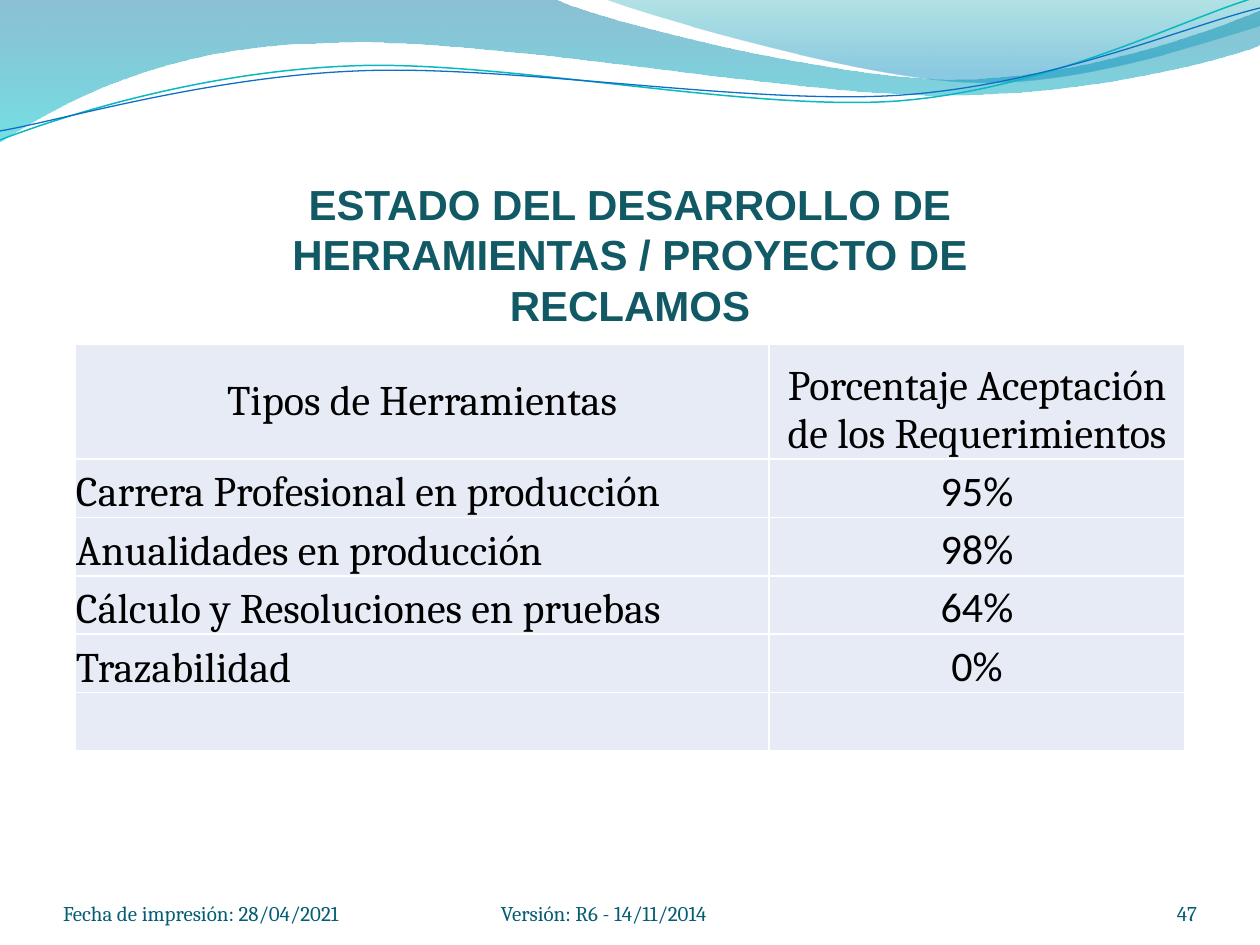
from math import cos, radians, sin

from lxml import etree
from pptx import Presentation
from pptx.dml.color import RGBColor
from pptx.enum.text import MSO_ANCHOR, MSO_AUTO_SIZE, PP_ALIGN
from pptx.oxml.ns import qn
from pptx.util import Pt

LEFT, CENTER, RIGHT = PP_ALIGN.LEFT, PP_ALIGN.CENTER, PP_ALIGN.RIGHT
TOP, MIDDLE, BOTTOM = MSO_ANCHOR.TOP, MSO_ANCHOR.MIDDLE, MSO_ANCHOR.BOTTOM
PX = 914400 / 126
rgb = RGBColor.from_string


def write(frame, text, font="Cambria", size=24, color="000000", bold=False, align=LEFT):
    para = frame.paragraphs[0]
    para.text = text
    para.alignment = align
    for run in para.runs:
        run.font.name = font
        run.font.size = Pt(size)
        run.font.bold = bold
        run.font.color.rgb = rgb(color)


def trace(shapes, box, parts, turn=0, close=False):
    """Draw a freeform in box: the first part is the start, then 2 numbers
    make a line and 6 a Bezier curve. Points are given as seen after the turn."""
    x, y, w, h = box
    pen = shapes.build_freeform(round(x * PX), round(y * PX), scale=1.0)
    corners = [(x + w, y), (x + w, y + h), (x, y + h)]
    pen.add_line_segments([(a * PX, b * PX) for a, b in corners])
    shape = pen.convert_to_shape()
    shape.shadow.inherit = False
    shape.rotation = turn
    path = next(shape.element.iter(qn("a:path")))
    for old in list(path):
        path.remove(old)
    co, si = cos(radians(turn)), sin(radians(turn))
    for i, part in enumerate(parts):
        kind = "moveTo" if i == 0 else "lnTo" if len(part) == 2 else "cubicBezTo"
        move = etree.SubElement(path, qn("a:" + kind))
        for a, b in zip(part[::2], part[1::2]):
            dx, dy = a - x - w / 2, b - y - h / 2
            etree.SubElement(move, qn("a:pt"),
                             x=str(round((w / 2 + dx * co + dy * si) * PX)),
                             y=str(round((h / 2 - dx * si + dy * co) * PX)))
    if close:
        etree.SubElement(path, qn("a:close"))
    return shape


deck = Presentation()
deck.slide_width, deck.slide_height = round(1260 * PX), round(945 * PX)
slide = deck.slides.add_slide(deck.slide_layouts[5])
shapes = slide.shapes

# Filled bands: box, parts, gradient stops (position, colour, opacity %)
bands = [
    ((-1, -1, 1262, 143),
     [(0, 0), (554, -1), (600, 21, 837, 79, 955, 79), (1075, 79, 1207, 33, 1260, 11),
      (1261, 45), (1239, 55, 1096, 96, 940, 95), (784, 95, 481, 35, 324, 43),
      (163, 45, 58, 105, -1, 142), (0, 0)],
     [(0, "0074A1", 45), (1, "00C6CF", 55)]),
    ((604, -1, 656, 88),
     [(604, -1), (641, 14, 859, 78, 969, 82), (1079, 87, 1211, 40, 1260, 26),
      (1260, 0), (604, -1)],
     [(0, "00A1A9", 30), (0.8, "008BBF", 45)]),
]
for box, parts, stops in bands:
    band = trace(shapes, box, parts, close=True)
    band.line.fill.background()
    band.fill.gradient()
    band.fill.gradient_angle = 270
    for stop, (place, color, alpha) in zip(band.fill.gradient_stops, stops):
        stop.position = place
        stop.color.rgb = rgb(color)
    tags = band.element.spPr.iter(qn("a:srgbClr"))
    for tag, (place, color, alpha) in zip(tags, stops):
        etree.SubElement(tag, qn("a:alpha"), val=str(alpha * 1000))

waves = [
    ((-2, 28, 1262, 89),
     [(0, 140), (60, 117, 199, 72, 349, 66), (498, 59, 747, 112, 898, 101),
      (1050, 89, 1182, 19, 1257, -3)], "0AB8BF", 0.85),
    ((-2, 38, 1264, 73),
     [(0, 131), (59, 121, 207, 77, 357, 71), (508, 64, 752, 106, 903, 95),
      (1053, 84, 1186, 26, 1260, 8)], "0F6FC6", 0.75),
]
for box, parts, color, width in waves:
    wave = trace(shapes, box, parts, turn=357.3)
    wave.fill.background()
    wave.line.color.rgb = rgb(color)
    wave.line.width = Pt(width)

# Footer
for x, width, text, align in [
    (63, 294, "Fecha de impresión: 28/04/2021", LEFT),
    (501, 329, "Versión: R6 - 14/11/2014", LEFT),
    (1092, 105, "47", RIGHT),
]:
    note = shapes.add_textbox(*(round(v * PX) for v in (x, 876, width, 50)))
    frame = note.text_frame
    frame.word_wrap = True
    frame.vertical_anchor = BOTTOM
    frame.margin_left = frame.margin_right = frame.margin_top = frame.margin_bottom = 0
    write(frame, text, size=12, color="045D75", align=align)

# Title, in front of the waves
title = shapes.title
title.element.getparent().append(title.element)
title.left, title.top, title.width, title.height = (
    round(v * PX) for v in (154, 172, 952, 420))
title.text_frame.auto_size = MSO_AUTO_SIZE.NONE
title.text_frame.word_wrap = True
title.text_frame.vertical_anchor = TOP
write(title.text_frame, "ESTADO DEL DESARROLLO DE HERRAMIENTAS / PROYECTO DE RECLAMOS",
      font="Arial", color="115964", bold=True, align=CENTER)

# Table
rows = [
    ("Tipos de Herramientas", "Porcentaje Aceptación\nde los Requerimientos"),
    ("Carrera Profesional en producción", "95%"),
    ("Anualidades en producción", "98%"),
    ("Cálculo y Resoluciones en pruebas", "64%"),
    ("Trazabilidad", "0%"),
    ("", ""),
]
HEAD, BODY = 115, 292
table = shapes.add_table(
    len(rows), 2, *(round(v * PX) for v in (75, 344, 1110, HEAD + BODY))).table
for col, width in zip(table.columns, (694, 416)):
    col.width = round(width * PX)
for r, row in enumerate(rows):
    table.rows[r].height = round((BODY / (len(rows) - 1) if r else HEAD) * PX)
    for c, text in enumerate(row):
        cell = table.cell(r, c)
        cell.vertical_anchor = MIDDLE if (r, c) == (0, 0) else BOTTOM
        cell.margin_left = cell.margin_right = cell.margin_top = round(PX)
        cell.margin_bottom = 0
        if text:
            write(cell.text_frame, text, font="Calibri" if r and c else "Cambria",
                  align=LEFT if r and not c else CENTER)
        props = cell._tc.get_or_add_tcPr()
        for side in ("lnL", "lnR", "lnT", "lnB"):
            edge = etree.SubElement(props, qn("a:" + side), w=str(Pt(1)))
            paint = etree.SubElement(edge, qn("a:solidFill"))
            etree.SubElement(paint, qn("a:srgbClr"), val="FFFFFF")
        cell.fill.solid()
        cell.fill.fore_color.rgb = rgb("E7EBF5")

deck.save("out.pptx")
